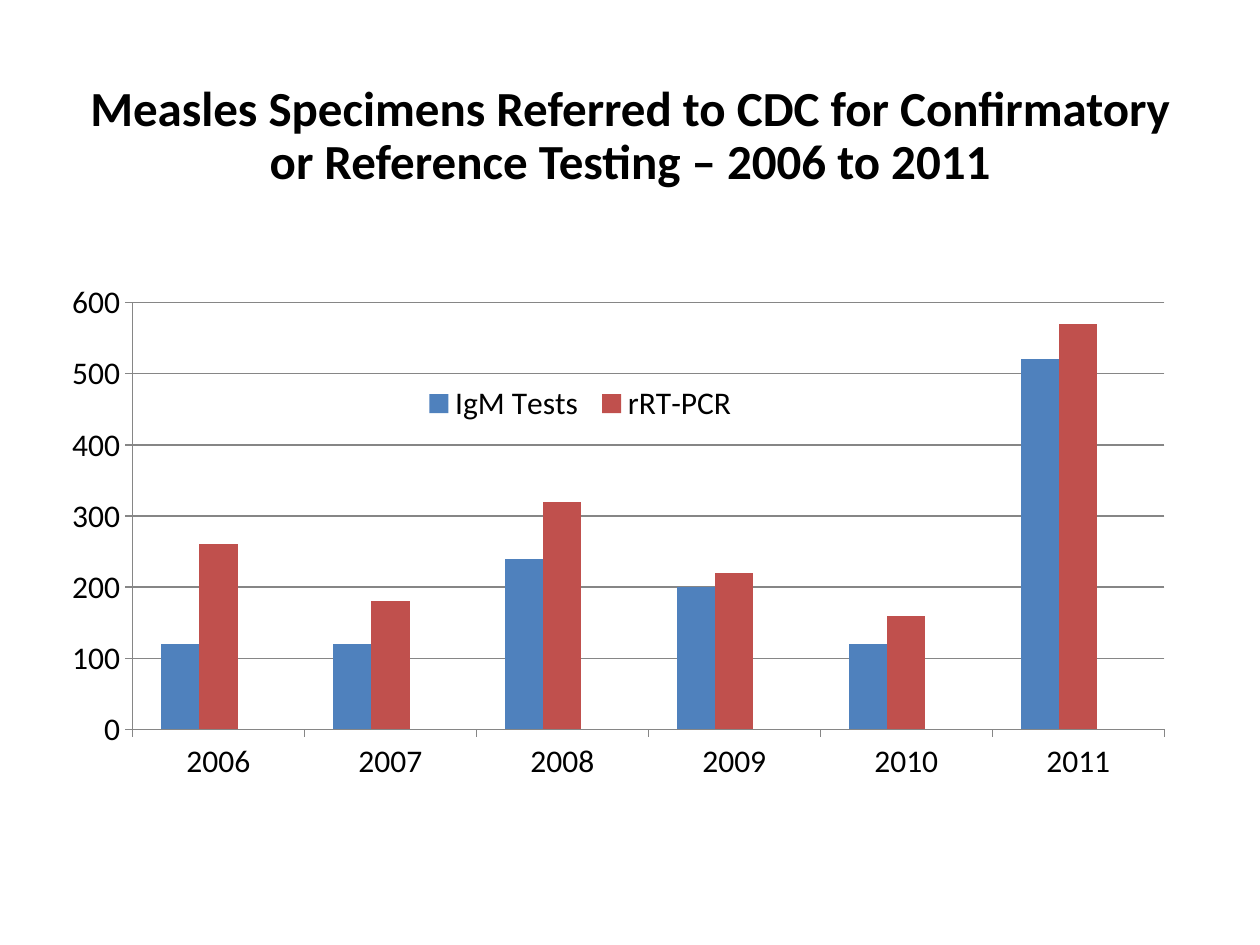
from lxml.etree import SubElement
from pptx import Presentation
from pptx.chart.data import CategoryChartData
from pptx.dml.color import RGBColor
from pptx.enum.chart import XL_CHART_TYPE, XL_LEGEND_POSITION, XL_TICK_MARK
from pptx.enum.text import MSO_ANCHOR, MSO_AUTO_SIZE, PP_ALIGN
from pptx.oxml.ns import qn
from pptx.util import Cm, Pt

TITLE = "Measles Specimens Referred to CDC for Confirmatory or Reference Testing – 2006 to 2011"
YEARS = ["2006", "2007", "2008", "2009", "2010", "2011"]
SERIES = [
    ("IgM Tests", [120, 120, 240, 200, 120, 520], "4F81BD"),
    ("rRT-PCR", [260, 180, 320, 220, 160, 570], "C0504D"),
    ("Series 3", [None] * len(YEARS), "9BBB59"),
]
EMPTY_SERIES = 2
TITLE_AREA = {"left": 1.27, "top": 0.76, "width": 22.86, "height": 3.18}
CHART_AREA = (1.07, 4.24, 22.86, 11.63)
PLOT_LAYOUT = {"x": 0.07, "y": 0.16, "w": 0.91, "h": 0.74}
LEGEND_LAYOUT = {"x": 0.32, "y": 0.3, "w": 0.29, "h": 0.07}


def color(value):
    """Return the colour for a hex string."""
    return RGBColor.from_string(value)


def apply(target, formats):
    """Set each attribute in a dict of format values."""
    for name, value in formats.items():
        setattr(target, name, value)


def set_font(font, size, bold=False):
    """Give text the slide's typeface and colour."""
    apply(font, {"name": "Calibri", "size": Pt(size), "bold": bold})
    font.color.rgb = color("000000")


def place(parent, position, fractions, inner=False):
    """Fix a chart part at fractions of the chart area."""
    for old in parent.findall(qn("c:layout")):
        parent.remove(old)
    layout = parent.makeelement(qn("c:layout"))
    parent.insert(position, layout)
    manual = SubElement(layout, qn("c:manualLayout"))
    if inner:
        SubElement(manual, qn("c:layoutTarget"), val="inner")
    for side in "xy":
        SubElement(manual, qn(f"c:{side}Mode"), val="edge")
    for side, fraction in fractions.items():
        SubElement(manual, qn(f"c:{side}"), val=str(fraction))


def add_title(page):
    """Fill and format the title placeholder."""
    box = page.shapes.title
    apply(box, {side: Cm(value) for side, value in TITLE_AREA.items()})
    apply(box.text_frame, {
        "text": TITLE,
        "word_wrap": True,
        "auto_size": MSO_AUTO_SIZE.NONE,
        "vertical_anchor": MSO_ANCHOR.BOTTOM,
    })
    para = box.text_frame.paragraphs[0]
    apply(para, {"alignment": PP_ALIGN.CENTER, "line_spacing": Pt(30)})
    set_font(para.runs[0].font, 28, bold=True)


def add_legend(chart):
    """Show the legend inside the plot without the empty series."""
    chart.has_legend = True
    legend = chart.legend
    apply(legend, {"position": XL_LEGEND_POSITION.TOP, "include_in_layout": True})
    set_font(legend.font, 18)
    element = legend._element
    entry = element.makeelement(qn("c:legendEntry"))
    SubElement(entry, qn("c:idx"), val=str(EMPTY_SERIES))
    SubElement(entry, qn("c:delete"), val="1")
    element.insert(1, entry)
    place(element, 2, LEGEND_LAYOUT)


def add_column_chart(page):
    """Draw the clustered columns by year."""
    data = CategoryChartData()
    data.categories = YEARS
    for name, values, _ in SERIES:
        data.add_series(name, values)
    chart = page.shapes.add_chart(
        XL_CHART_TYPE.COLUMN_CLUSTERED, *map(Cm, CHART_AREA), data
    ).chart
    chart.has_title = False
    set_font(chart.font, 18)
    plot = chart.plots[0]
    apply(plot, {"gap_width": 150, "overlap": 0, "vary_by_categories": False})
    for series, (_, _, fill) in zip(plot.series, SERIES):
        series.format.fill.solid()
        series.format.fill.fore_color.rgb = color(fill)
    value_axis = chart.value_axis
    apply(value_axis, {"minimum_scale": 0, "maximum_scale": 600,
                       "major_unit": 100, "has_major_gridlines": True})
    for axis in (chart.category_axis, value_axis):
        apply(axis, {"major_tick_mark": XL_TICK_MARK.OUTSIDE,
                     "minor_tick_mark": XL_TICK_MARK.NONE})
        set_font(axis.tick_labels.font, 18)
    for part in (chart.category_axis, value_axis, value_axis.major_gridlines):
        part.format.line.color.rgb = color("868686")
        part.format.line.width = Pt(0.75)
    place(chart._chartSpace.find(".//" + qn("c:plotArea")), 0, PLOT_LAYOUT, inner=True)
    add_legend(chart)


def main():
    """Build and save the slide."""
    deck = Presentation()
    apply(deck, {"slide_width": Cm(25.4), "slide_height": Cm(19.05)})
    page = deck.slides.add_slide(deck.slide_layouts[5])
    add_column_chart(page)
    add_title(page)
    deck.save("out.pptx")


if __name__ == "__main__":
    main()
